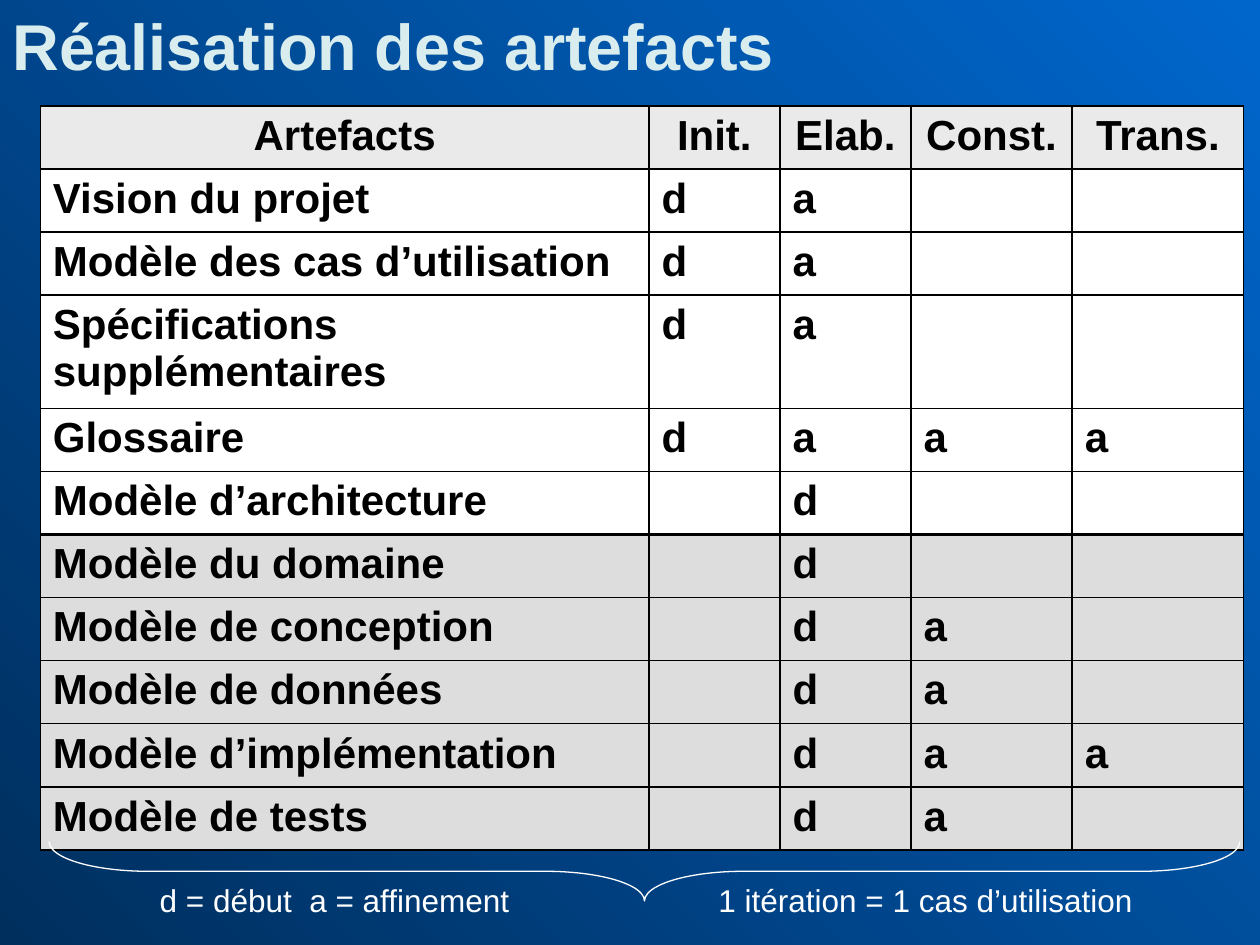
import pptx
import pptx.dml.color
import pptx.enum.shapes
import pptx.enum.text
import pptx.oxml.ns
import pptx.util
from lxml import etree

Inches = pptx.util.Inches
Pt = pptx.util.Pt
RGBColor = pptx.dml.color.RGBColor
PP_ALIGN = pptx.enum.text.PP_ALIGN
qn = pptx.oxml.ns.qn

NIGHT_BLUE = RGBColor(0x00, 0x2F, 0x5E)
BRIGHT_BLUE = RGBColor(0x00, 0x66, 0xCC)
PALE_AQUA = RGBColor(0xD9, 0xED, 0xEF)
BLACK = RGBColor(0x00, 0x00, 0x00)
WHITE = RGBColor(0xFF, 0xFF, 0xFF)
HEADER_GREY = RGBColor(0xEA, 0xEA, 0xEA)
MODEL_GREY = RGBColor(0xDD, 0xDD, 0xDD)

HEADERS = ["Artefacts", "Init.", "Elab.", "Const.", "Trans."]
ARTEFACTS = [
    ["Vision du projet", "d", "a", "", ""],
    ["Modèle des cas d’utilisation", "d", "a", "", ""],
    ["Spécifications supplémentaires", "d", "a", "", ""],
    ["Glossaire", "d", "a", "a", "a"],
    ["Modèle d’architecture", "", "d", "", ""],
    ["Modèle du domaine", "", "d", "", ""],
    ["Modèle de conception", "", "d", "a", ""],
    ["Modèle de données", "", "d", "a", ""],
    ["Modèle d’implémentation", "", "d", "a", "a"],
    ["Modèle de tests", "", "d", "a", ""],
]
COLUMN_WIDTHS = [4.83, 1.04, 1.04, 1.28, 1.36]
ROW_HEIGHT = 0.5
TALL_ROW, TALL_ROW_HEIGHT = 3, 0.9
FIRST_MODEL_ROW = 6
LEGENDS = ["d = début  a = affinement", "1 itération = 1 cas d’utilisation"]


def write_text(text_frame, text, size, color, bold, align, space_percent):
    text_frame.text = text
    paragraph = text_frame.paragraphs[0]
    paragraph.alignment = align
    spacing = etree.SubElement(paragraph._p.get_or_add_pPr(), qn("a:spcBef"))
    etree.SubElement(spacing, qn("a:spcPct"), val=str(space_percent * 1000))
    for run in paragraph.runs:
        run.font.name = "Arial"
        run.font.size = Pt(size)
        run.font.bold = bold
        run.font.color.rgb = color


def add_label(slide, left, top, width, height, text, size, color, bold, align):
    label = slide.shapes.add_textbox(Inches(left), Inches(top), Inches(width), Inches(height))
    label.text_frame.word_wrap = True
    label.text_frame.auto_size = pptx.enum.text.MSO_AUTO_SIZE.SHAPE_TO_FIT_TEXT
    write_text(label.text_frame, text, size, color, bold, align, 50)


def set_borders(cell, top_width, bottom_width):
    widths = {"a:lnL": 1, "a:lnR": 1, "a:lnT": top_width, "a:lnB": bottom_width}
    for side, width in widths.items():
        border = etree.SubElement(cell._tc.get_or_add_tcPr(), qn(side), w=str(Pt(width)))
        fill = etree.SubElement(border, qn("a:solidFill"))
        etree.SubElement(fill, qn("a:srgbClr"), val=str(BLACK))


def row_color(row):
    if row == 0:
        return HEADER_GREY
    return WHITE if row < FIRST_MODEL_ROW else MODEL_GREY


def add_artefact_table(slide):
    grid = [HEADERS] + ARTEFACTS
    heights = [TALL_ROW_HEIGHT if row == TALL_ROW else ROW_HEIGHT for row in range(len(grid))]
    table = slide.shapes.add_table(
        len(grid), len(HEADERS), Inches(0.32), Inches(0.84),
        Inches(sum(COLUMN_WIDTHS)), Inches(sum(heights)),
    ).table
    table.horz_banding = False
    for column, width in zip(table.columns, COLUMN_WIDTHS):
        column.width = Inches(width)
    for row, (height, values) in enumerate(zip(heights, grid)):
        table.rows[row].height = Inches(height)
        top_width = 2.25 if row == FIRST_MODEL_ROW else 1
        bottom_width = 2.25 if row == FIRST_MODEL_ROW - 1 else 1
        align = PP_ALIGN.CENTER if row == 0 else PP_ALIGN.LEFT
        for column, value in enumerate(values):
            cell = table.cell(row, column)
            set_borders(cell, top_width, bottom_width)
            cell.fill.solid()
            cell.fill.fore_color.rgb = row_color(row)
            if value:
                write_text(cell.text_frame, value, 24, BLACK, True, align, 20)


def add_brace(slide):
    brace = slide.shapes.add_shape(
        pptx.enum.shapes.MSO_SHAPE.LEFT_BRACE,
        Inches(4.88), Inches(2.19), Inches(0.47), Inches(9.45),
    )
    brace.rotation = 270
    brace.adjustments[0] = 1.668
    brace.shadow.inherit = False
    brace.fill.background()
    brace.line.color.rgb = WHITE
    brace.line.width = Pt(0.75)


def paint_background(slide):
    fill = slide.background.fill
    fill.gradient()
    fill.gradient_angle = 45
    for stop, color in zip(fill.gradient_stops, [NIGHT_BLUE, BRIGHT_BLUE]):
        stop.color.rgb = color


def main():
    presentation = pptx.Presentation()
    presentation.slide_width = Inches(10)
    presentation.slide_height = Inches(7.5)
    slide = presentation.slides.add_slide(presentation.slide_layouts[6])
    paint_background(slide)
    add_label(slide, 0, 0, 9.64, 0.72, "Réalisation des artefacts",
              37, PALE_AQUA, True, PP_ALIGN.LEFT)
    add_artefact_table(slide)
    add_brace(slide)
    legend_width = 4.69
    for index, legend in enumerate(LEGENDS):
        add_label(slide, 0.31 + index * legend_width, 6.94, legend_width, 0.4,
                  legend, 18, WHITE, False, PP_ALIGN.CENTER)
    presentation.save("out.pptx")


if __name__ == "__main__":
    main()
